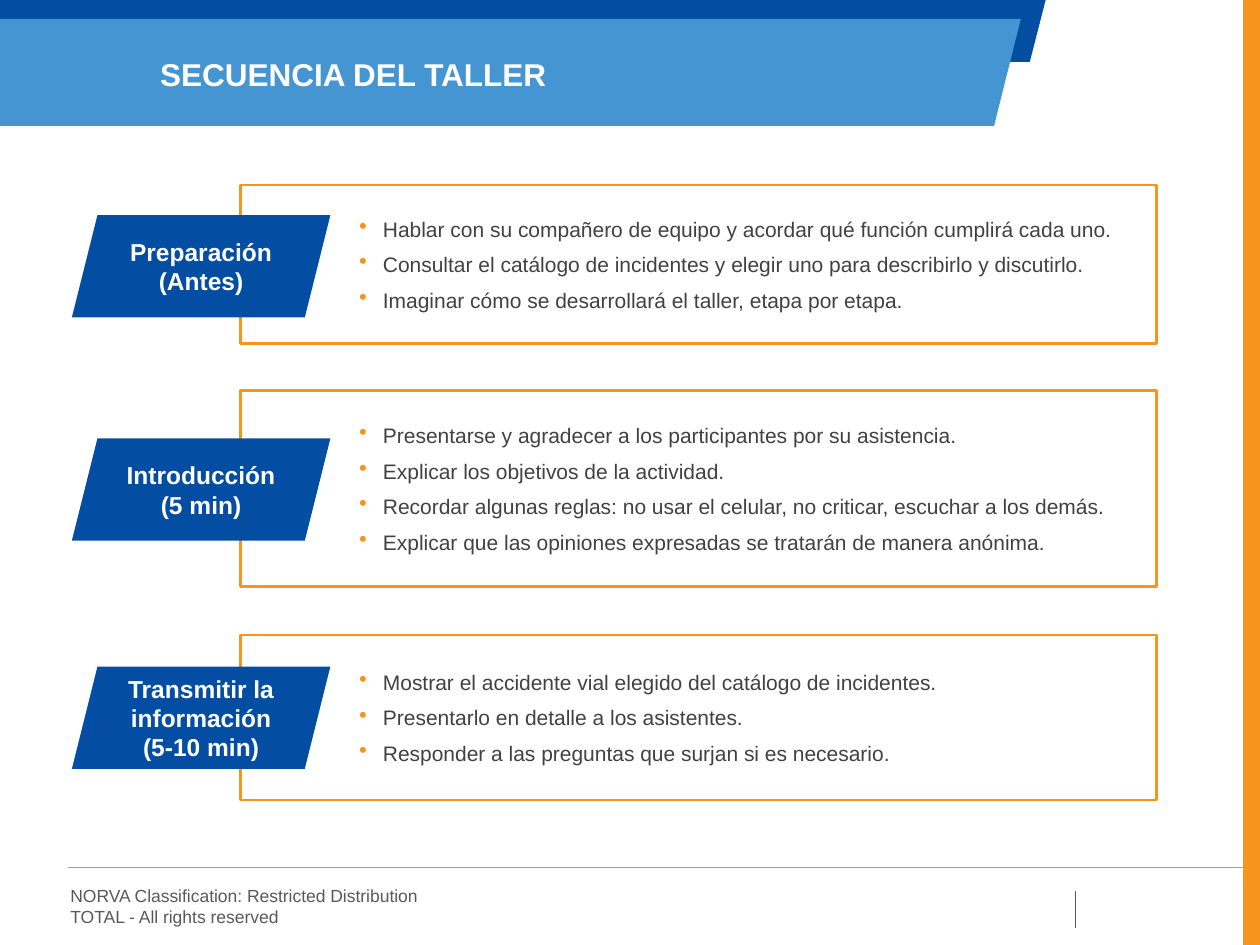
"""Build the workshop sequence slide."""
from dataclasses import dataclass

from lxml import etree
from pptx import Presentation
from pptx import util as u
from pptx.dml.color import RGBColor
from pptx.enum import shapes, text
from pptx.oxml.ns import qn

ORANGE, NAVY, SKY = "F7941D", "034EA2", "4495D1"
WHITE, BODY, GREY, RULE = "FFFFFF", "414141", "595959", "A0A0A0"


@dataclass
class Stage:
    top: float
    height: float
    tag_top: float
    label: list[str]
    steps: list[str]


STAGES = [
    Stage(3.73, 3.2, 4.34, ["Preparación", "(Antes)"], [
        "Hablar con su compañero de equipo y acordar qué función cumplirá cada uno.",
        "Consultar el catálogo de incidentes y elegir uno para describirlo y discutirlo.",
        "Imaginar cómo se desarrollará el taller, etapa por etapa.",
    ]),
    Stage(7.87, 3.96, 8.84, ["Introducción", "(5 min)"], [
        "Presentarse y agradecer a los participantes por su asistencia.",
        "Explicar los objetivos de la actividad.",
        "Recordar algunas reglas: no usar el celular, no criticar, escuchar a los demás.",
        "Explicar que las opiniones expresadas se tratarán de manera anónima.",
    ]),
    Stage(12.8, 3.33, 13.44, ["Transmitir la información", "(5-10 min)"], [
        "Mostrar el accidente vial elegido del catálogo de incidentes.",
        "Presentarlo en detalle a los asistentes.",
        "Responder a las preguntas que surjan si es necesario.",
    ]),
]


def rgb(value: str) -> RGBColor:
    return RGBColor.from_string(value)


def add_bullet(p) -> None:
    pPr = p._p.get_or_add_pPr()
    pPr.set("marL", str(u.Cm(0.48)))
    pPr.set("indent", str(u.Cm(-0.48)))
    color = etree.SubElement(pPr, qn("a:buClr"))
    etree.SubElement(color, qn("a:srgbClr"), val=ORANGE)
    etree.SubElement(pPr, qn("a:buSzPct"), val="110000")
    etree.SubElement(pPr, qn("a:buChar"), char="•")


def write(sp, lines: list[str], *, size: float, color: str, bold: bool = False,
          align=text.PP_ALIGN.LEFT, anchor=text.MSO_ANCHOR.TOP,
          insets=(0.25, 0.13, 0.25, 0.13), bullets: bool = False, gap: float = 0) -> None:
    tf = sp.text_frame
    tf.word_wrap = True
    tf.vertical_anchor = anchor
    tf.margin_left, tf.margin_top, tf.margin_right, tf.margin_bottom = map(u.Cm, insets)
    for i, line in enumerate(lines):
        p = tf.add_paragraph() if i else tf.paragraphs[0]
        if bullets:
            add_bullet(p)
        p.alignment = align
        if i and gap:
            p.space_before = u.Pt(gap)
        r = p.add_run()
        r.text = line
        r.font.name, r.font.size, r.font.bold = "Arial", u.Pt(size), bold
        r.font.color.rgb = rgb(color)


def paint(sp, fill: str | None = None, line: str | None = None):
    sp.shadow.inherit = False
    if fill:
        sp.fill.solid()
        sp.fill.fore_color.rgb = rgb(fill)
    else:
        sp.fill.background()
    if line:
        sp.line.color.rgb = rgb(line)
        sp.line.width = u.Pt(1.5)
    else:
        sp.line.fill.background()
    return sp


def add_box(s, kind, x: float, y: float, w: float, h: float, **colors: str):
    return paint(s.shapes.add_shape(kind, u.Cm(x), u.Cm(y), u.Cm(w), u.Cm(h)), **colors)


def add_text(s, x: float, y: float, w: float, h: float, lines: list[str], **style) -> None:
    write(s.shapes.add_textbox(u.Cm(x), u.Cm(y), u.Cm(w), u.Cm(h)), lines, **style)


def add_line(s, x1: float, y1: float, x2: float, y2: float, color: str) -> None:
    ln = s.shapes.add_connector(shapes.MSO_CONNECTOR.STRAIGHT,
                                u.Cm(x1), u.Cm(y1), u.Cm(x2), u.Cm(y2))
    ln.line.color.rgb = rgb(color)
    ln.line.width = u.Pt(0.75)
    etree.SubElement(ln._element.spPr, qn("a:effectLst"))


def add_band(s, top: float, bottom: float, top_right: float, bottom_right: float,
             fill: str) -> None:
    fb = s.shapes.build_freeform(u.Cm(0), u.Cm(top))
    corners = [(top_right, top), (bottom_right, bottom), (0, bottom)]
    fb.add_line_segments([(u.Cm(x), u.Cm(y)) for x, y in corners], close=True)
    paint(fb.convert_to_shape(), fill=fill)


def add_stage(s, stage: Stage) -> None:
    frame = add_box(s, shapes.MSO_SHAPE.RECTANGLE, 4.85, stage.top, 18.47, stage.height,
                    line=ORANGE)
    write(frame, stage.steps, size=12, color=BODY, anchor=text.MSO_ANCHOR.MIDDLE,
          insets=(2.39, 0.13, 0, 0.13), bullets=True, gap=6)
    tag = add_box(s, shapes.MSO_SHAPE.PARALLELOGRAM, 1.45, stage.tag_top, 5.21, 2.06,
                  fill=NAVY)
    write(tag, stage.label, size=14, color=WHITE, bold=True,
          align=text.PP_ALIGN.CENTER, anchor=text.MSO_ANCHOR.MIDDLE)


def main() -> None:
    prs = Presentation()
    prs.slide_width, prs.slide_height = u.Cm(25.4), u.Cm(19.05)
    s = prs.slides.add_slide(prs.slide_layouts[6])

    add_box(s, shapes.MSO_SHAPE.RECTANGLE, 25.06, 0, 0.34, 19.05, fill=ORANGE)
    add_line(s, 1.37, 17.49, 25.06, 17.49, RULE)
    add_line(s, 21.68, 18.7, 21.68, 17.96, GREY)
    add_text(s, 1.17, 17.71, 13.7, 1.11,
             ["NORVA Classification: Restricted Distribution",
              "TOTAL - All rights reserved"], size=10, color=GREY)
    add_band(s, 0, 1.25, 21.08, 20.76, NAVY)
    add_band(s, 0.38, 2.54, 20.58, 20.04, SKY)
    add_text(s, 3.23, 1.1, 19.66, 0.77, ["SECUENCIA DEL TALLER"], size=18, color=WHITE,
             bold=True, insets=(0, 0, 0, 0))
    for stage in STAGES:
        add_stage(s, stage)

    prs.save("out.pptx")


if __name__ == "__main__":
    main()
